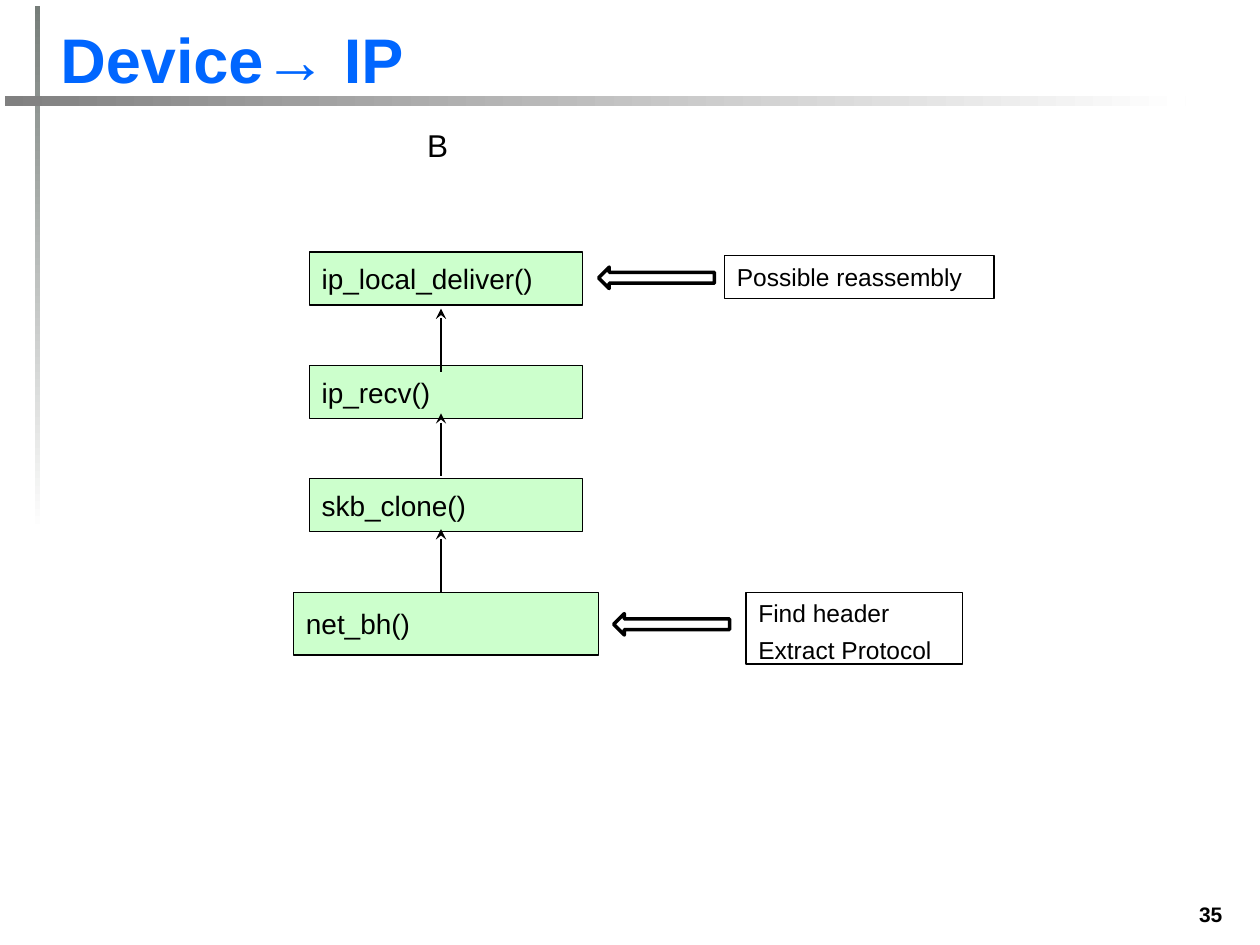
from lxml import etree
from pptx import Presentation
from pptx.dml.color import RGBColor
from pptx.enum.shapes import MSO_CONNECTOR, MSO_SHAPE
from pptx.enum.text import MSO_ANCHOR, PP_ALIGN
from pptx.oxml.ns import qn
from pptx.util import Inches, Pt

BLACK = RGBColor(0x00, 0x00, 0x00)
WHITE = RGBColor(0xFF, 0xFF, 0xFF)
BLUE = RGBColor(0x00, 0x66, 0xFF)
GREEN = RGBColor(0xCC, 0xFF, 0xCC)
GRAY = RGBColor(0x80, 0x80, 0x80)
SLATE = RGBColor(0x76, 0x7D, 0x79)
RECT, ARROW = MSO_SHAPE.RECTANGLE, MSO_SHAPE.LEFT_ARROW
LINE = MSO_CONNECTOR.STRAIGHT
TOP, MIDDLE, BOTTOM = MSO_ANCHOR.TOP, MSO_ANCHOR.MIDDLE, MSO_ANCHOR.BOTTOM
LEFT, RIGHT = PP_ALIGN.LEFT, PP_ALIGN.RIGHT


def to_emu(box):
    return [Inches(side) for side in box]


def write(shape, lines, size, anchor=TOP, align=LEFT, bold=False, color=BLACK):
    frame = shape.text_frame
    frame.word_wrap = True
    frame.vertical_anchor = anchor
    for i, text in enumerate(lines):
        para = frame.add_paragraph() if i else frame.paragraphs[0]
        para.alignment = align
        if i:
            para.space_before = Pt(4)
        run = para.add_run()
        run.text = text
        run.font.name = "Arial"
        run.font.size = Pt(size)
        run.font.bold = bold
        run.font.color.rgb = color


def add_box(slide, kind, box, fill=None, width=0.75):
    shape = slide.shapes.add_shape(kind, *to_emu(box))
    shape.shadow.inherit = False
    if fill is None:
        shape.fill.background()
    else:
        shape.fill.solid()
        shape.fill.fore_color.rgb = fill
    shape.line.color.rgb = BLACK
    shape.line.width = Pt(width)
    return shape


def add_bar(slide, box, color, angle):
    """Add a bar that fades from the given colour to white."""
    bar = slide.shapes.add_shape(RECT, *to_emu(box))
    bar.shadow.inherit = False
    bar.line.fill.background()
    bar.fill.gradient()
    bar.fill.gradient_angle = angle
    for stop, shade in zip(bar.fill.gradient_stops, (color, WHITE)):
        stop.color.rgb = shade


def add_frame(slide, box):
    """Add the fading bars, the title and the page number."""
    left, top, width, height = box
    add_bar(slide, (left + 0.28, top + 0.05, 0.04, 4.17), SLATE, 270)
    add_bar(slide, (left + 0.04, top + 0.76, 9.37, 0.08), GRAY, 0)

    title = slide.shapes.title
    title.left, title.top, title.width, title.height = to_emu(
        (left + 0.38, top + 0.13, 8.5, 0.68))
    write(title, ["Device→ IP"], 36, BOTTOM, bold=True, color=BLUE)

    page = slide.shapes.add_textbox(
        *to_emu((left + width - 0.83, top + height - 0.39, 0.63, 0.3)))
    write(page, ["35"], 12, align=RIGHT, bold=True)


def add_rise(slide, x, top):
    """Add a thin arrow that points up to the given top."""
    line = slide.shapes.add_connector(
        LINE, *to_emu((x, top, x, top + 0.5)))
    line.line.color.rgb = BLACK
    line.line.width = Pt(1)
    head = etree.SubElement(line.line._get_or_add_ln(), qn("a:headEnd"))
    head.set("type", "stealth")
    etree.SubElement(line._element.spPr, qn("a:effectLst"))


def add_calls(slide, box):
    """Add the chain of calls, evenly spaced and read from the bottom up."""
    left, top, width, _ = box
    mid = left + width / 2
    calls = ["ip_local_deliver()", "ip_recv()", "skb_clone()", "net_bh()"]
    sizes = [(2.17, 0.42)] * 3 + [(2.42, 0.5)]
    for i, (call, (wide, high)) in enumerate(zip(calls, sizes)):
        step = add_box(
            slide, RECT, (mid - wide / 2, top + 0.9 * i, wide, high), GREEN)
        write(step, [call], 16, MIDDLE)
    for drop in (0.45, 1.28, 2.2):
        add_rise(slide, left + 1.17, top + drop)

    mark = slide.shapes.add_textbox(
        *to_emu((left + 1.06, top - 1, 0.18, 0.3)))
    frame = mark.text_frame
    frame.margin_left = frame.margin_right = 0
    frame.margin_top = frame.margin_bottom = 0
    write(mark, ["B"], 18)


def add_note(slide, box, lines, tip):
    """Add a note and the block arrow that starts at the given tip."""
    write(add_box(slide, RECT, box), lines, 14)
    x, y = tip
    add_box(slide, ARROW, (x, y, 0.92, 0.17), width=2)


def main():
    deck = Presentation()
    deck.slide_width, deck.slide_height = Inches(10), Inches(7.5)
    slide = deck.slides.add_slide(deck.slide_layouts[5])
    add_frame(slide, (0, 0, 10, 7.5))
    add_calls(slide, (2.33, 2, 2.42, 3.2))
    add_note(slide, (5.75, 2.03, 2.14, 0.34),
             ["Possible reassembly"], (4.75, 2.12))
    add_note(slide, (5.92, 4.7, 1.72, 0.57),
             ["Find header", "Extract Protocol"], (4.87, 4.87))
    deck.save("out.pptx")


if __name__ == "__main__":
    main()
